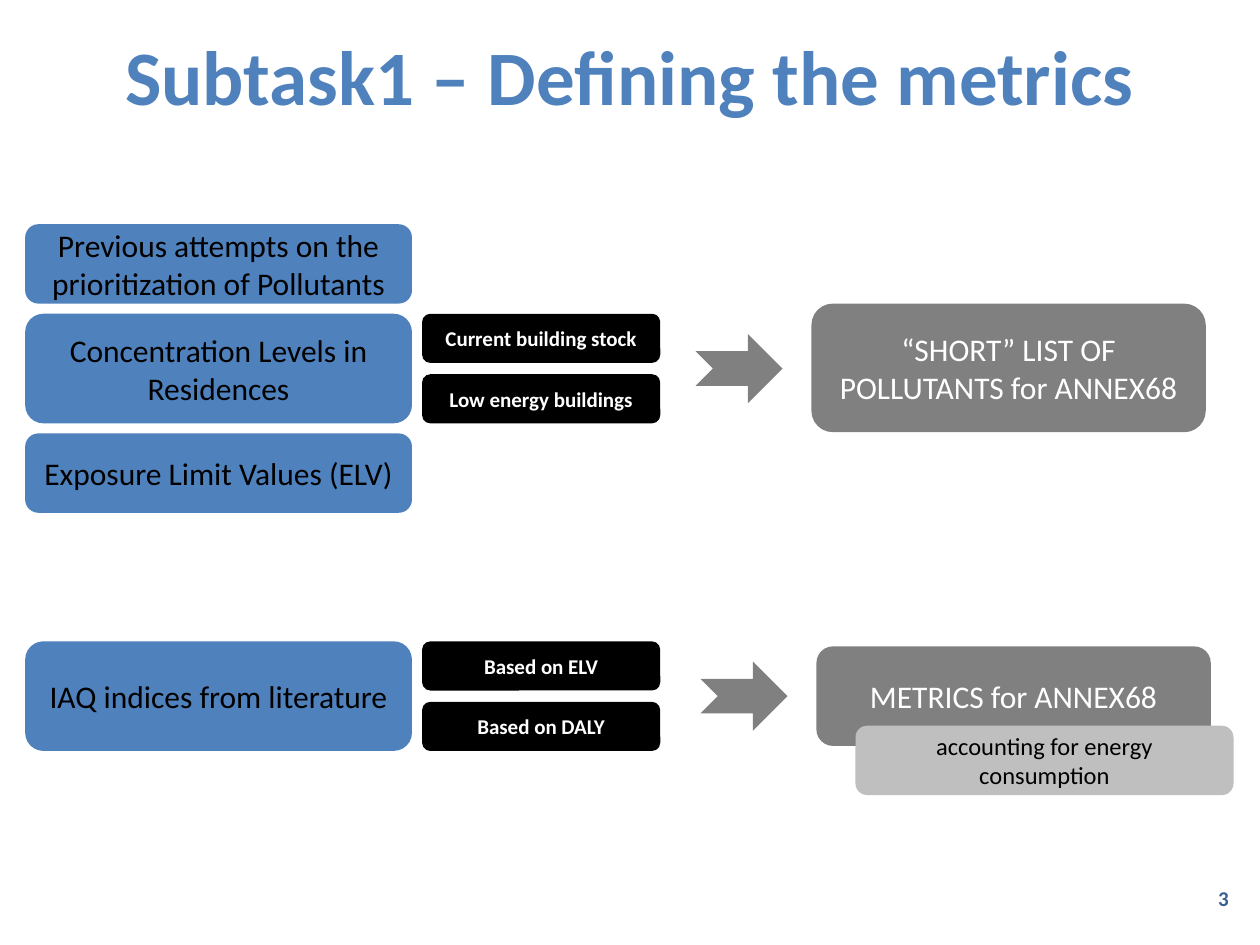
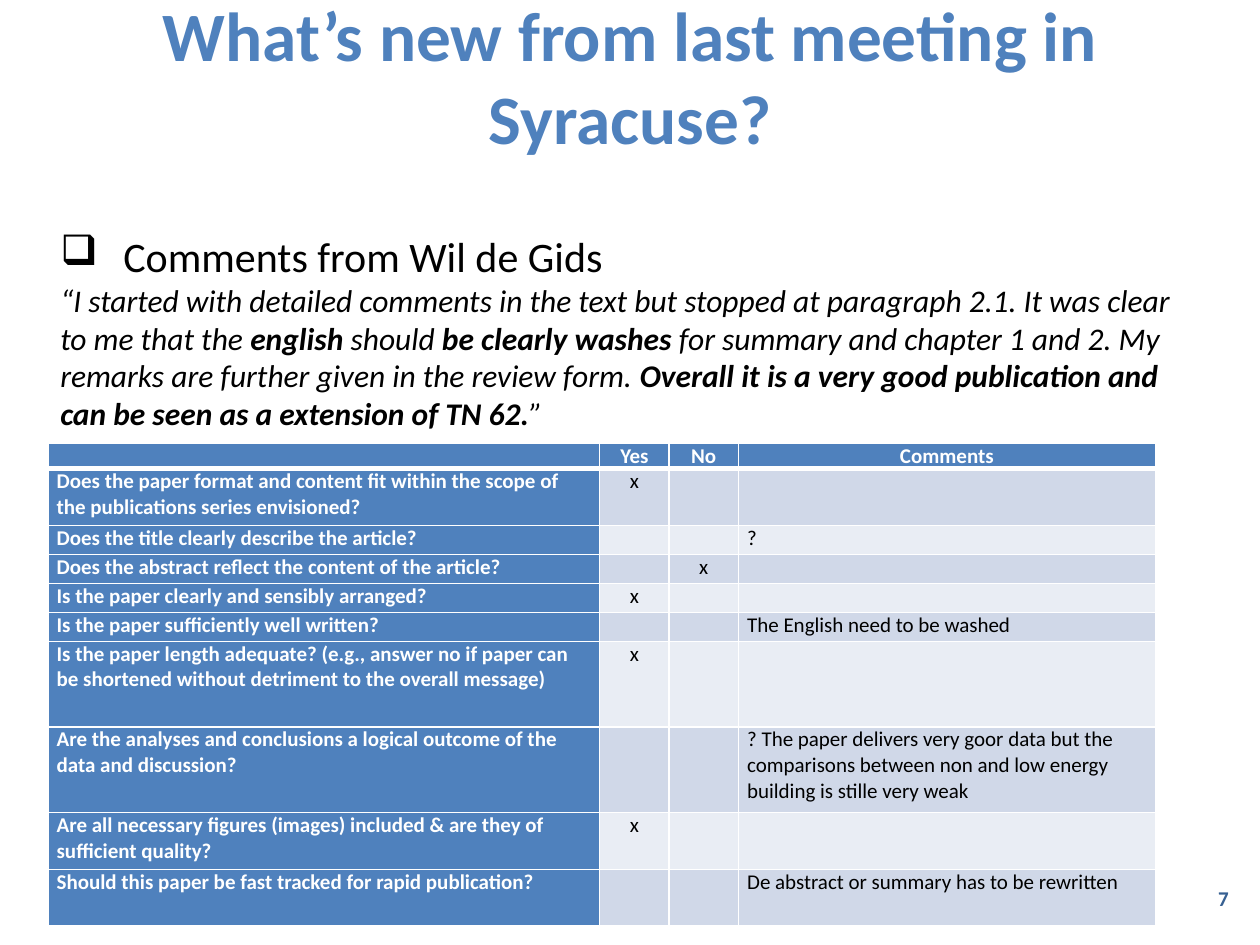
import dataclasses
import typing

import lxml.etree
import pptx
import pptx.dml.color
import pptx.enum.shapes
import pptx.enum.text
import pptx.oxml.ns
import pptx.util

Inches = pptx.util.Inches
Pt = pptx.util.Pt
SHAPE = pptx.enum.shapes.MSO_SHAPE
ALIGN = pptx.enum.text.PP_ALIGN
ANCHOR = pptx.enum.text.MSO_ANCHOR
qn = pptx.oxml.ns.qn

# Shared look
COLOURS = {
    "blue": "4F81BD", "navy": "376092", "black": "000000", "white": "FFFFFF",
    "grey": "808080", "silver": "BFBFBF", "band_dark": "D0D8E8", "band_light": "E9EDF4",
}
FONT = "Calibri"
TITLE_ONLY = 5


@dataclasses.dataclass(frozen=True)
class TextStyle:
    size: float
    colour: str
    bold: bool = False
    italic: bool = False


@dataclasses.dataclass(frozen=True)
class BoxStyle:
    fill: str
    text: TextStyle


@dataclasses.dataclass(frozen=True)
class Box:
    text: str
    left: float
    top: float
    width: float
    height: float
    style: BoxStyle


SLIDE_NUMBER = TextStyle(12, "navy", bold=True)
SOURCE = BoxStyle("blue", TextStyle(18, "black"))
TAG = BoxStyle("black", TextStyle(12, "white", bold=True))
RESULT = BoxStyle("grey", TextStyle(18, "white"))
REMARK = BoxStyle("silver", TextStyle(14, "black"))


def rgb(name: str) -> pptx.dml.color.RGBColor:
    return pptx.dml.color.RGBColor.from_string(COLOURS[name])


def add_span(para: typing.Any, text: str, style: TextStyle) -> None:
    span = para.add_run()
    span.text = text
    values = {"name": FONT, "size": Pt(style.size), "bold": style.bold, "italic": style.italic}
    for name, value in values.items():
        setattr(span.font, name, value)
    span.font.color.rgb = rgb(style.colour)


def add_page(deck: typing.Any, title: str, size: float, number: str) -> typing.Any:
    """Add a page with its title and page number."""
    page = deck.slides.add_slide(deck.slide_layouts[TITLE_ONLY])
    heading = page.shapes.title
    place = {"left": 0.5, "top": -0.03, "width": 9, "height": 1.25}
    for name, value in place.items():
        setattr(heading, name, Inches(value))
    frame = heading.text_frame
    frame.auto_size = pptx.enum.text.MSO_AUTO_SIZE.NONE
    frame.vertical_anchor = ANCHOR.MIDDLE
    frame.paragraphs[0].alignment = ALIGN.CENTER
    add_span(frame.paragraphs[0], title, TextStyle(size, "blue", bold=True))

    corner = page.shapes.add_textbox(Inches(9.57), Inches(6.93), Inches(0.43), Inches(0.4))
    corner.text_frame.word_wrap = True
    corner.text_frame.vertical_anchor = ANCHOR.MIDDLE
    add_span(corner.text_frame.paragraphs[0], number, SLIDE_NUMBER)
    return page


def add_filled(page: typing.Any, kind: typing.Any, left: float, top: float,
               width: float, height: float, fill: str) -> typing.Any:
    shape = page.shapes.add_shape(kind, Inches(left), Inches(top), Inches(width), Inches(height))
    shape.shadow.inherit = False
    shape.fill.solid()
    shape.fill.fore_color.rgb = rgb(fill)
    shape.line.fill.background()
    return shape


def add_box(page: typing.Any, box: Box) -> None:
    shape = add_filled(page, SHAPE.ROUNDED_RECTANGLE, box.left, box.top,
                       box.width, box.height, box.style.fill)
    frame = shape.text_frame
    frame.word_wrap = True
    frame.vertical_anchor = ANCHOR.MIDDLE
    for index, line in enumerate(box.text.split("\n")):
        para = frame.add_paragraph() if index else frame.paragraphs[0]
        para.alignment = ALIGN.CENTER
        add_span(para, line, box.style.text)


# Metrics page
GAP = 0.08
SOURCE_LEFT, SOURCE_WIDTH = 0.2, 3.07
TAG_LEFT, TAG_WIDTH, TAG_HEIGHT = 3.35, 1.89, 0.39
RESULT_WIDTH = 3.13
TALL, LOW = 0.87, 0.63
POLLUTANTS_TOP, INDICES_TOP = 1.78, 5.09
POLLUTANT_SOURCES = [
    ("Previous attempts on the\nprioritization of Pollutants", LOW, ()),
    ("Concentration Levels in Residences", TALL, ("Current building stock", "Low energy buildings")),
    ("Exposure Limit Values (ELV)", LOW, ()),
]
INDEX_SOURCES = [("IAQ indices from literature", TALL, ("Based on ELV", "Based on DALY"))]
RESULTS = [
    Box("“SHORT” LIST OF POLLUTANTS for ANNEX68", 6.44, 2.41, RESULT_WIDTH, 1.02, RESULT),
    Box("METRICS for ANNEX68", 6.48, 5.13, RESULT_WIDTH, 0.79, RESULT),
    Box("accounting for energy consumption", 6.79, 5.76, 3, 0.55, REMARK),
]
ARROWS = [(5.52, 2.65), (5.56, 5.25)]


def add_sources(page: typing.Any, sources: list, top: float) -> None:
    """Stack source boxes, each with its tags beside it."""
    for text, height, tags in sources:
        add_box(page, Box(text, SOURCE_LEFT, top, SOURCE_WIDTH, height, SOURCE))
        for index, tag in enumerate(tags):
            tag_top = top + index * (height - TAG_HEIGHT)
            add_box(page, Box(tag, TAG_LEFT, tag_top, TAG_WIDTH, TAG_HEIGHT, TAG))
        top += height + GAP


def build_metrics_page(deck: typing.Any) -> None:
    page = add_page(deck, "Subtask1 – Defining the metrics", 44, "3")
    add_sources(page, POLLUTANT_SOURCES, POLLUTANTS_TOP)
    add_sources(page, INDEX_SOURCES, INDICES_TOP)
    for left, top in ARROWS:
        add_filled(page, SHAPE.NOTCHED_RIGHT_ARROW, left, top, 0.69, 0.55, "grey")
    for box in RESULTS:
        add_box(page, box)


# Review page
QUOTE = [  # text, bold
    ("“I started with detailed comments in the text but stopped at paragraph 2.1. "
     "It was clear to me that the ", False),
    ("english", True),
    (" should ", False),
    ("be clearly washes ", True),
    ("for summary and chapter 1 and 2. My remarks are further given in the review form. ", False),
    ("Overall it is a very good publication and can be seen as a extension of TN 62.", True),
    ("”", False),
]
COLUMN_WIDTHS = [4.38, 0.55, 0.55, 3.31]
REVIEW = [  # row height, question, yes, no, comments
    (0.19, "", "Yes", "No", "Comments"),
    (0.45, "Does the paper format and content fit within the scope of the publications "
           "series envisioned?", "x", "", ""),
    (0.23, "Does the title clearly describe the article?", "", "", "?"),
    (0.23, "Does the abstract reflect the content of the article?", "", "x", ""),
    (0.23, "Is the paper clearly and sensibly arranged?", "x", "", ""),
    (0.23, "Is the paper sufficiently well written?", "", "", "The English need to be washed"),
    (0.68, "Is the paper length adequate? (e.g., answer no if paper can be shortened "
           "without detriment to the overall message)", "x", "", ""),
    (0.68, "Are the analyses and conclusions a logical outcome of the data and discussion?", "", "",
     "? The paper delivers very goor data but the comparisons between non and low energy "
     "building is stille very weak"),
    (0.45, "Are all necessary figures (images) included & are they of sufficient quality?",
     "x", "", ""),
    (0.45, "Should this paper be fast tracked for rapid publication?", "", "",
     "De abstract or summary has to be rewritten"),
]
CELL_MARGINS = {"margin_left": 0.07, "margin_right": 0.07, "margin_top": 0, "margin_bottom": 0}


def add_bullet(para: typing.Any, symbol: str, indent: float) -> None:
    properties = para._p.get_or_add_pPr()
    properties.set("marL", str(Inches(indent)))
    properties.set("indent", str(Inches(-indent)))
    lxml.etree.SubElement(properties, qn("a:buChar"), char=symbol)


def add_borders(cell: typing.Any, bottom: float) -> None:
    properties = cell._tc.get_or_add_tcPr()
    for side, width in {"L": 1, "R": 1, "T": 1, "B": bottom}.items():
        line = lxml.etree.SubElement(properties, qn("a:ln" + side), w=str(Pt(width)))
        fill = lxml.etree.SubElement(line, qn("a:solidFill"))
        lxml.etree.SubElement(fill, qn("a:srgbClr"), val=COLOURS["white"])


def fill_cell(cell: typing.Any, text: str, row: int, column: int) -> None:
    heading = row == 0 or column == 0
    add_borders(cell, 1 if row else 3)
    cell.fill.solid()
    band = "band_dark" if row % 2 else "band_light"
    cell.fill.fore_color.rgb = rgb("blue" if heading else band)
    for name, value in CELL_MARGINS.items():
        setattr(cell, name, Inches(value))
    para = cell.text_frame.paragraphs[0]
    para.alignment = ALIGN.CENTER if row == 0 or column in (1, 2) else ALIGN.LEFT
    if text:
        add_span(para, text, TextStyle(12, "white" if heading else "black", bold=heading))
    else:
        # Keeps an empty cell from stretching its row
        lxml.etree.SubElement(para._p, qn("a:endParaRPr"), sz="1200")


def build_review_page(deck: typing.Any) -> None:
    page = add_page(deck, "What’s new from last meeting in Syracuse?", 39.6, "7")

    comments = page.shapes.add_textbox(Inches(0.38), Inches(1.78), Inches(9.18), Inches(2.12))
    frame = comments.text_frame
    frame.word_wrap = True
    add_bullet(frame.paragraphs[0], "❑", 0.5)
    add_span(frame.paragraphs[0], "Comments from Wil de Gids", TextStyle(24, "black"))
    para = frame.add_paragraph()
    for text, bold in QUOTE:
        add_span(para, text, TextStyle(18, "black", bold=bold, italic=True))

    height = sum(row[0] for row in REVIEW)
    table = page.shapes.add_table(len(REVIEW), len(COLUMN_WIDTHS), Inches(0.38), Inches(3.52),
                                  Inches(sum(COLUMN_WIDTHS)), Inches(height)).table
    for column, width in zip(table.columns, COLUMN_WIDTHS):
        column.width = Inches(width)
    for row, (row_height, *texts) in enumerate(REVIEW):
        table.rows[row].height = Inches(row_height)
        for column, text in enumerate(texts):
            fill_cell(table.cell(row, column), text, row, column)


def main() -> None:
    deck = pptx.Presentation()
    deck.slide_width, deck.slide_height = Inches(10), Inches(7.5)
    build_metrics_page(deck)
    build_review_page(deck)
    deck.save("out.pptx")


if __name__ == "__main__":
    main()
